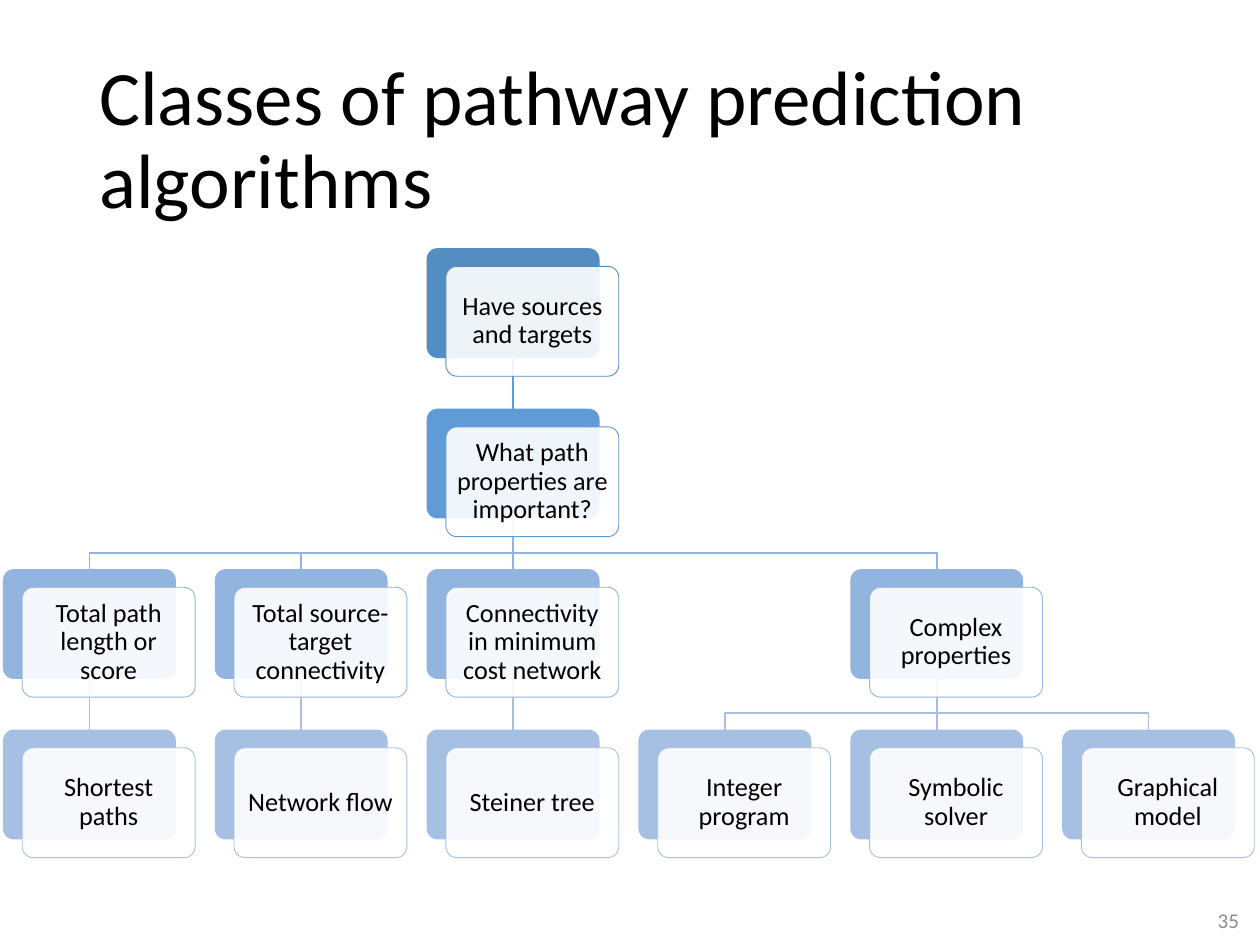
from pptx import Presentation
from pptx.dml.color import RGBColor
from pptx.enum.shapes import MSO_CONNECTOR, MSO_SHAPE
from pptx.enum.text import MSO_ANCHOR, PP_ALIGN
from pptx.oxml.ns import qn
from pptx.util import Pt
from lxml.etree import SubElement

BLACK = RGBColor(0x00, 0x00, 0x00)
WHITE = RGBColor(0xFF, 0xFF, 0xFF)
GRAY = RGBColor(0x8C, 0x8C, 0x8C)
LEVEL_COLORS = [
    RGBColor(0x53, 0x8D, 0xC1),
    RGBColor(0x5F, 0x9C, 0xD5),
    RGBColor(0x91, 0xB5, 0xDE),
    RGBColor(0xA5, 0xC0, 0xE3),
]

# Tree grid, in points
LEFT, TOP = 1.7, 141.8
COLUMN_STEP, ROW_STEP = 121.05, 91.7
CARD_WIDTH, CARD_HEIGHT = 98.8, 62.8
CARD_SHIFT_X, CARD_SHIFT_Y = 11, 10.4
ELBOW_DROP = 19.6

# Each node: text, level, column, index of its parent
NODES = [
    ("Have sources and targets", 0, 2, None),
    ("What path properties are important?", 1, 2, 0),
    ("Total path length or score", 2, 0, 1),
    ("Shortest paths", 3, 0, 2),
    ("Total source-target connectivity", 2, 1, 1),
    ("Network flow", 3, 1, 4),
    ("Connectivity in minimum cost network", 2, 2, 1),
    ("Steiner tree", 3, 2, 6),
    ("Complex properties", 2, 4, 1),
    ("Integer program", 3, 3, 8),
    ("Symbolic solver", 3, 4, 8),
    ("Graphical model", 3, 5, 8),
]


def write_text(shape, text, *, size, color=BLACK, align=PP_ALIGN.LEFT,
               line_spacing=None, inset=None):
    frame = shape.text_frame
    frame.word_wrap = True
    frame.vertical_anchor = MSO_ANCHOR.MIDDLE
    if inset is not None:
        frame.margin_left = frame.margin_right = Pt(inset)
        frame.margin_top = frame.margin_bottom = Pt(inset)
    para = frame.paragraphs[0]
    para.alignment = align
    para.line_spacing = line_spacing
    span = para.add_run()
    span.text = text
    span.font.name = "Calibri"
    span.font.size = Pt(size)
    span.font.color.rgb = color


def add_card(page, left, top, fill):
    card = page.shapes.add_shape(MSO_SHAPE.ROUNDED_RECTANGLE, Pt(left), Pt(top),
                                 Pt(CARD_WIDTH), Pt(CARD_HEIGHT))
    card.adjustments[0] = 0.1
    card.shadow.inherit = False
    card.fill.solid()
    card.fill.fore_color.rgb = fill
    card.line.fill.background()
    return card


def add_node(page, text, level, column):
    color = LEVEL_COLORS[level]
    left, top = LEFT + column * COLUMN_STEP, TOP + level * ROW_STEP
    add_card(page, left, top, color)

    # Translucent front card carries the text
    front = add_card(page, left + CARD_SHIFT_X, top + CARD_SHIFT_Y, WHITE)
    fill_color = front.fill._xPr.find(qn("a:solidFill"))[0]
    SubElement(fill_color, qn("a:alpha"), val="90000")
    front.line.color.rgb = color
    front.line.width = Pt(0.5)
    write_text(front, text, size=15, align=PP_ALIGN.CENTER,
               line_spacing=0.9, inset=4.3)


def add_branch(page, level, parent_column, column):
    start_x, end_x = (LEFT + c * COLUMN_STEP + CARD_WIDTH / 2
                      for c in (parent_column, column))
    end_y = TOP + level * ROW_STEP
    start_y = end_y - ROW_STEP + CARD_HEIGHT
    if start_x == end_x:
        branch = page.shapes.add_connector(MSO_CONNECTOR.STRAIGHT, Pt(start_x),
                                           Pt(start_y), Pt(end_x), Pt(end_y))
        SubElement(branch._element.spPr, qn("a:effectLst"))
    else:
        elbow_y = start_y + ELBOW_DROP
        builder = page.shapes.build_freeform(Pt(start_x), Pt(start_y))
        builder.add_line_segments([(Pt(start_x), Pt(elbow_y)),
                                   (Pt(end_x), Pt(elbow_y)),
                                   (Pt(end_x), Pt(end_y))], close=False)
        branch = builder.convert_to_shape()
        branch.fill.background()
        branch.shadow.inherit = False
    branch.line.color.rgb = LEVEL_COLORS[level]
    branch.line.width = Pt(1)


def place(shape, left, top, width, height):
    shape.left, shape.top = Pt(left), Pt(top)
    shape.width, shape.height = Pt(width), Pt(height)


def main():
    deck = Presentation()
    deck.slide_width, deck.slide_height = Pt(720), Pt(540)
    page = deck.slides.add_slide(deck.slide_layouts[5])

    # Title
    title = page.shapes.title
    place(title, 49.5, 28.75, 621, 104.4)
    write_text(title, "Classes of pathway prediction algorithms", size=44,
               line_spacing=0.9)

    # Branches lie behind the cards
    for _, level, column, parent in NODES:
        if parent is not None:
            add_branch(page, level, NODES[parent][2], column)
    for text, level, column, _ in NODES:
        add_node(page, text, level, column)

    # Slide number
    number = page.shapes.add_textbox(Pt(553), Pt(511.2), Pt(162), Pt(28.8))
    write_text(number, "35", size=12, color=GRAY, align=PP_ALIGN.RIGHT)

    deck.save("out.pptx")


if __name__ == "__main__":
    main()
